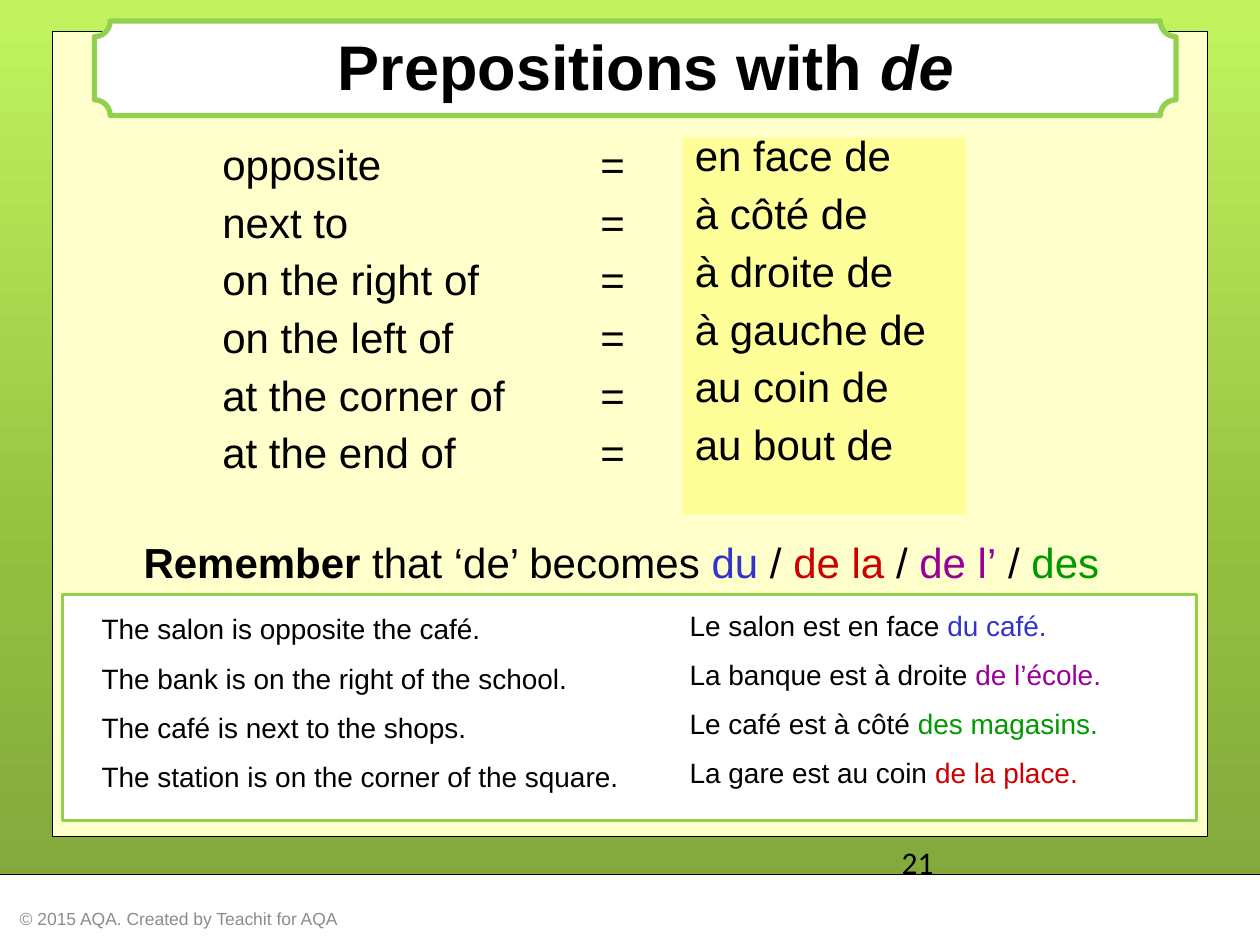
from copy import deepcopy
from typing import NamedTuple

from lxml.etree import SubElement
from pptx import Presentation
from pptx.dml.color import RGBColor
from pptx.enum.shapes import MSO_CONNECTOR, MSO_SHAPE
from pptx.enum.text import MSO_ANCHOR, PP_ALIGN
from pptx.oxml.ns import qn
from pptx.util import Inches, Pt

COLUMNS = 24  # the slide is a grid of 24 by 18 square cells
CELL = 10 / COLUMNS
BLACK, WHITE, LEAF = "000000", "FFFFFF", "92D050"
BLUE, RED, PURPLE, GREEN = "3333CC", "CC0000", "990099", "009900"


class Area(NamedTuple):
    """A place on the grid, in columns and rows."""
    column: float
    row: float
    columns: float
    rows: float

    def inches(self) -> list:
        return [Inches(cells * CELL) for cells in self]


class Span(NamedTuple):
    """A stretch of text with its own look."""
    text: str
    color: str = BLACK
    bold: bool = False
    italic: bool = False


class Phrase(NamedTuple):
    english: str
    french: str


class Example(NamedTuple):
    english: str
    french: str
    ending: str
    color: str


PHRASES = [
    Phrase("opposite", "en face de"),
    Phrase("next to", "à côté de"),
    Phrase("on the right of", "à droite de"),
    Phrase("on the left of", "à gauche de"),
    Phrase("at the corner of", "au coin de"),
    Phrase("at the end of", "au bout de"),
]
EXAMPLES = [
    Example("The salon is opposite the café.", "Le salon est en face ", "du café.", BLUE),
    Example("The bank is on the right of the school.", "La banque est à droite ",
            "de l’école.", PURPLE),
    Example("The café is next to the shops.", "Le café est à côté ", "des magasins.", GREEN),
    Example("The station is on the corner of the square.", "La gare est au coin ",
            "de la place.", RED),
]
PHRASE_FORMAT = dict(size=24, before=12.8, line_spacing=0.7)
EXAMPLE_FORMAT = dict(size=16, before=8.9)


def rgb(color: str) -> RGBColor:
    return RGBColor.from_string(color)


def paint_background(slide, stops: list) -> None:
    fill = slide.background.fill
    fill.gradient()
    fill.gradient_angle = 270
    stop_list = slide._element.find(".//" + qn("a:gsLst"))
    stop_list.append(deepcopy(stop_list[-1]))
    for stop, (position, color) in zip(fill.gradient_stops, stops):
        stop.position = position
        stop.color.rgb = rgb(color)


def draw_panel(slide, area: Area, fill: str, line: str = "", width: float = 0.5,
               kind=MSO_SHAPE.RECTANGLE):
    panel = slide.shapes.add_shape(kind, *area.inches())
    panel.shadow.inherit = False
    panel.fill.solid()
    panel.fill.fore_color.rgb = rgb(fill)
    if line:
        panel.line.color.rgb = rgb(line)
        panel.line.width = Pt(width)
    else:
        panel.line.fill.background()
    return panel


def draw_rule(slide, row: float) -> None:
    left, top, width, _ = Area(0, row, COLUMNS, 0).inches()
    rule = slide.shapes.add_connector(MSO_CONNECTOR.STRAIGHT, left, top, left + width, top)
    rule.line.color.rgb = rgb(BLACK)
    rule.line.width = Pt(0.5)
    SubElement(rule._element.spPr, qn("a:effectLst"))


def write(shape, lines: list, size: float, font: str = "Arial", align=PP_ALIGN.LEFT,
          anchor=MSO_ANCHOR.TOP, before: float = 0, line_spacing: float = 1,
          tab: float = 0) -> None:
    """Fill a shape with lines, each of them a list of spans."""
    frame = shape.text_frame
    frame.word_wrap = True
    frame.vertical_anchor = anchor
    for index, spans in enumerate(lines):
        paragraph = frame.paragraphs[0] if index == 0 else frame.add_paragraph()
        paragraph.alignment = align
        paragraph.line_spacing = line_spacing
        paragraph.space_before = Pt(before if index else 0)
        if tab:
            tabs = SubElement(paragraph._p.get_or_add_pPr(), qn("a:tabLst"))
            SubElement(tabs, qn("a:tab"), pos=str(Inches(tab)), algn="l")
        for span in spans:
            run = paragraph.add_run()
            run.text = span.text
            run.font.name = font
            run.font.size = Pt(size)
            run.font.bold = span.bold
            run.font.italic = span.italic
            run.font.color.rgb = rgb(span.color)


def write_box(slide, area: Area, lines: list, **text_format) -> None:
    write(slide.shapes.add_textbox(*area.inches()), lines, **text_format)


def main() -> None:
    deck = Presentation()
    deck.slide_width, deck.slide_height = Inches(10), Inches(7.5)
    slide = deck.slides.add_slide(deck.slide_layouts[6])
    paint_background(slide, [(0, "C2F35F"), (0.62, "92BE3F"), (1, "80A33D")])

    # Footer band and slide number
    draw_panel(slide, Area(0, 16.66, COLUMNS, 1.34), WHITE)
    draw_rule(slide, 16.66)
    write_box(slide, Area(0.14, 17.02, 9.6, 0.96),
              [[Span("© 2015 AQA. Created by Teachit for AQA", "8C8C8C")]],
              size=10, anchor=MSO_ANCHOR.MIDDLE)
    write_box(slide, Area(16.94, 15.94, 5.4, 0.96), [[Span("21")]], size=18, font="Calibri")

    # Page, examples frame and title plaque
    draw_panel(slide, Area(1, 0.6, 22, 15.33), "FFFFCC", BLACK)
    draw_panel(slide, Area(1.2, 11.33, 21.6, 4.3), WHITE, LEAF, 1.75)
    draw_panel(slide, Area(1.8, 0.4, 20.6, 1.8), WHITE, LEAF, 3, MSO_SHAPE.PLAQUE)
    write_box(slide, Area(2.8, 0.4, 19, 1.7),
              [[Span("Prepositions with ", bold=True), Span("de", bold=True, italic=True)]],
              size=36, align=PP_ALIGN.CENTER)

    # Example sentences
    write_box(slide, Area(12.9, 11.47, 9.48, 3.8),
              [[Span(e.french), Span(e.ending, e.color)] for e in EXAMPLES], **EXAMPLE_FORMAT)
    write_box(slide, Area(1.7, 11.54, 11.1, 3.8),
              [[Span(e.english)] for e in EXAMPLES], **EXAMPLE_FORMAT)

    # Vocabulary list
    french_panel = draw_panel(slide, Area(13, 2.62, 5.4, 7.18), "FFFF99")
    write(french_panel, [[Span(p.french)] for p in PHRASES], **PHRASE_FORMAT)
    write_box(slide, Area(4, 2.78, 8.4, 7.18),
              [[Span(f"{p.english}\t=")] for p in PHRASES], tab=3, **PHRASE_FORMAT)

    # Reminder of the contracted forms
    reminder = [Span("Remember", bold=True), Span(" that ‘de’ becomes "), Span("du", BLUE)]
    for form, color in [("de la", RED), ("de l’", PURPLE), ("des", GREEN)]:
        reminder += [Span(" / "), Span(form, color)]
    write_box(slide, Area(1.06, 10.1, 21.55, 1.22), [reminder],
              size=24, align=PP_ALIGN.CENTER)

    deck.save("out.pptx")


if __name__ == "__main__":
    main()
